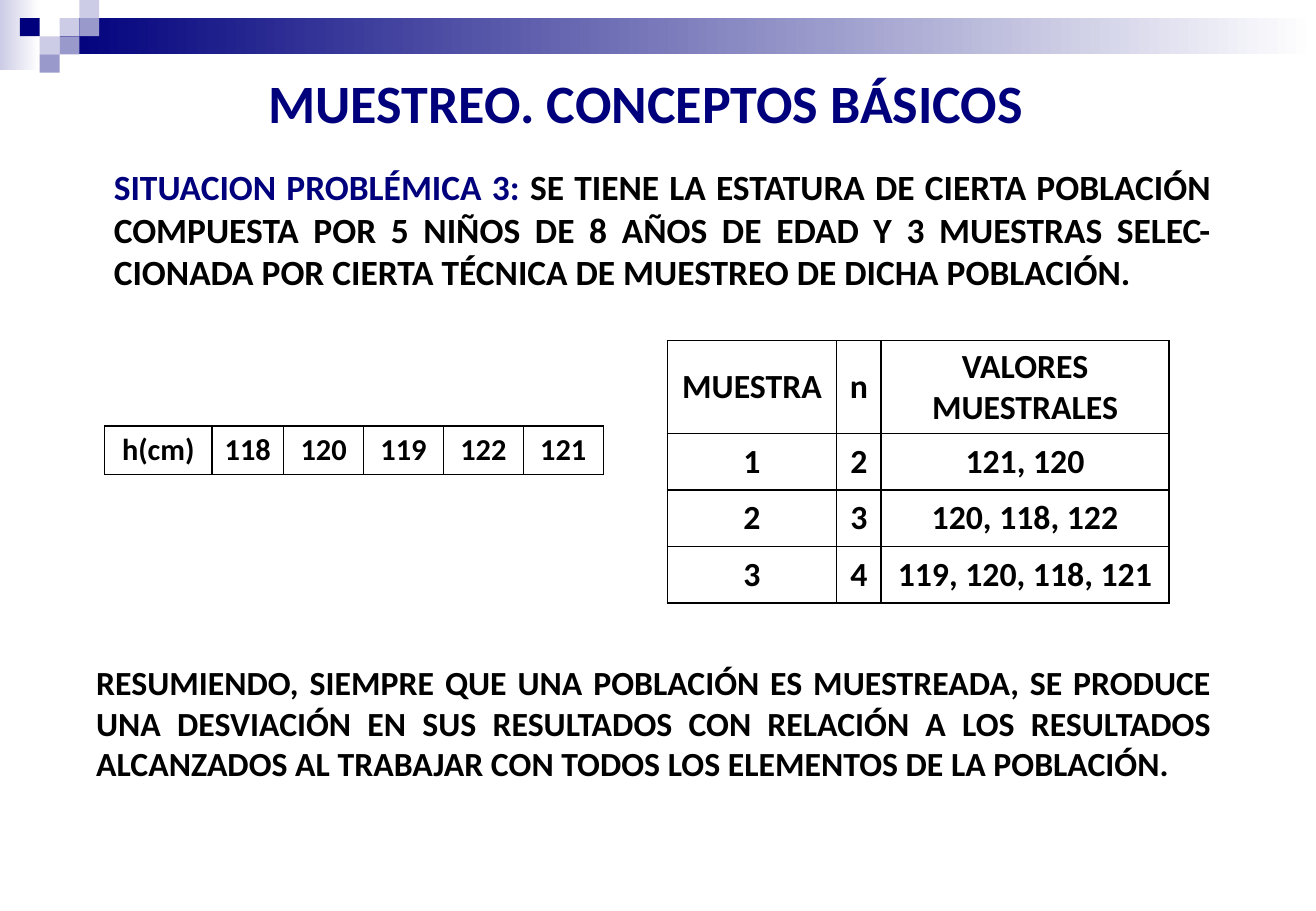
from lxml.etree import SubElement
from pptx import Presentation
from pptx.dml.color import RGBColor
from pptx.enum.shapes import MSO_SHAPE
from pptx.enum.text import MSO_ANCHOR, PP_ALIGN
from pptx.oxml.ns import qn
from pptx.util import Cm, Pt

NAVY = RGBColor(0x00, 0x00, 0x7D)
LILAC = RGBColor(0x99, 0x99, 0xCC)
PALE = RGBColor(0xCC, 0xCC, 0xE6)
WHITE = RGBColor(0xFF, 0xFF, 0xFF)
BLACK = RGBColor(0x00, 0x00, 0x00)
FONT = "Calibri"

SLIDE_WIDTH, SLIDE_HEIGHT = Cm(27.51), Cm(19.05)

# Column, row and colour of each square in the corner mosaic
MOSAIC = [(3, 1, PALE), (4, 0, PALE), (4, 1, LILAC), (2, 2, PALE),
          (1, 1, NAVY), (3, 2, LILAC), (2, 3, LILAC)]

HEIGHTS = [["h(cm)", "118", "120", "119", "122", "121"]]
SAMPLES = [
    ["MUESTRA", "n", "VALORES MUESTRALES"],
    ["1", "2", "121, 120"],
    ["2", "3", "120, 118, 122"],
    ["3", "4", "119, 120, 118, 121"],
]


def add_run(paragraph, text, size, color=BLACK):
    run = paragraph.add_run()
    run.text = text
    run.font.name = FONT
    run.font.size = Pt(size)
    run.font.bold = True
    run.font.color.rgb = color


def add_block(slide, left, top, width, height, *colors):
    """Add a borderless rectangle; two colours give a left-to-right gradient."""
    block = slide.shapes.add_shape(MSO_SHAPE.RECTANGLE, left, top, width, height)
    block.shadow.inherit = False
    block.line.fill.background()
    if len(colors) == 1:
        block.fill.solid()
        block.fill.fore_color.rgb = colors[0]
    else:
        block.fill.gradient()
        block.fill.gradient_angle = 0
        for stop, color in zip(block.fill.gradient_stops, colors):
            stop.color.rgb = color


def add_header_band(slide, left, top, width, height):
    """Draw the fading bar and the mosaic of squares, five columns by four rows."""
    column, row = Cm(0.83) // 2, height // 4
    add_block(slide, left, top, 2 * column, height - Cm(0.05), PALE, WHITE)
    add_block(slide, left + 3 * column, top + row,
              width - 3 * column, 2 * row, NAVY, WHITE)
    for x, y, color in MOSAIC:
        add_block(slide, left + x * column, top + y * row, column, row, color)


def set_title(slide, left, top, width, height):
    title = slide.shapes.title
    title.left, title.top, title.width, title.height = left, top, width, height
    paragraph = title.text_frame.paragraphs[0]
    paragraph.alignment = PP_ALIGN.CENTER
    add_run(paragraph, "MUESTREO. CONCEPTOS BÁSICOS", 32, NAVY)


def add_statement(slide, left, top, width, height, size, *parts):
    """Add a justified paragraph made of (text, colour) parts."""
    frame = slide.shapes.add_textbox(left, top, width, height).text_frame
    frame.word_wrap = True
    paragraph = frame.paragraphs[0]
    paragraph.alignment = PP_ALIGN.JUSTIFY
    for text, color in parts:
        add_run(paragraph, text, size, color)


def set_borders(cell):
    properties = cell._tc.get_or_add_tcPr()
    for position, side in enumerate(("lnL", "lnR", "lnT", "lnB")):
        line = SubElement(properties, qn(f"a:{side}"), w=str(Pt(1)))
        fill = SubElement(line, qn("a:solidFill"))
        SubElement(fill, qn("a:srgbClr"), val=str(BLACK))
        properties.insert(position, line)


def add_grid(slide, left, top, columns, rows, values, size, anchor):
    """Add a plain bordered table with column widths and row heights in cm."""
    table = slide.shapes.add_table(len(rows), len(columns), left, top,
                                   Cm(sum(columns)), Cm(sum(rows))).table
    table.first_row = table.horz_banding = False
    for column, width in zip(table.columns, columns):
        column.width = Cm(width)
    for row, height, texts in zip(table.rows, rows, values):
        row.height = Cm(height)
        for cell, text in zip(row.cells, texts):
            cell.fill.background()
            set_borders(cell)
            cell.vertical_anchor = anchor
            cell.margin_left = cell.margin_right = Cm(0.23)
            cell.margin_top = cell.margin_bottom = Cm(0.12)
            paragraph = cell.text_frame.paragraphs[0]
            paragraph.alignment = PP_ALIGN.CENTER
            add_run(paragraph, text, size)


def main():
    presentation = Presentation()
    presentation.slide_width = SLIDE_WIDTH
    presentation.slide_height = SLIDE_HEIGHT
    slide = presentation.slides.add_slide(presentation.slide_layouts[5])

    add_header_band(slide, 0, 0, SLIDE_WIDTH, Cm(1.52))
    set_title(slide, Cm(5.16), Cm(1.32), Cm(16.69), Cm(1.63))
    add_statement(
        slide, Cm(2.13), Cm(3.33), Cm(23.44), Cm(2.95), 21,
        ("SITUACION PROBLÉMICA 3: ", NAVY),
        ("SE TIENE LA ESTATURA DE CIERTA POBLACIÓN COMPUESTA POR 5 NIÑOS DE "
         "8 AÑOS DE EDAD Y 3 MUESTRAS SELEC-CIONADA POR CIERTA TÉCNICA DE "
         "MUESTREO DE DICHA POBLACIÓN.", BLACK))
    add_grid(slide, Cm(2.19), Cm(8.91), [2.24, 1.5] + [1.67] * 4, [1.01],
             HEIGHTS, 18, MSO_ANCHOR.TOP)
    add_grid(slide, Cm(13.95), Cm(7.12), [3.54, 0.93, 6.02], [1.95] + [1.18] * 3,
             SAMPLES, 20, MSO_ANCHOR.MIDDLE)
    add_statement(
        slide, Cm(1.76), Cm(13.72), Cm(23.82), Cm(2.82), 20,
        ("RESUMIENDO, SIEMPRE QUE UNA POBLACIÓN ES MUESTREADA, SE PRODUCE "
         "UNA DESVIACIÓN EN SUS RESULTADOS CON RELACIÓN A LOS RESULTADOS "
         "ALCANZADOS AL TRABAJAR CON TODOS LOS ELEMENTOS DE LA POBLACIÓN.", BLACK))

    presentation.save("out.pptx")


if __name__ == "__main__":
    main()
